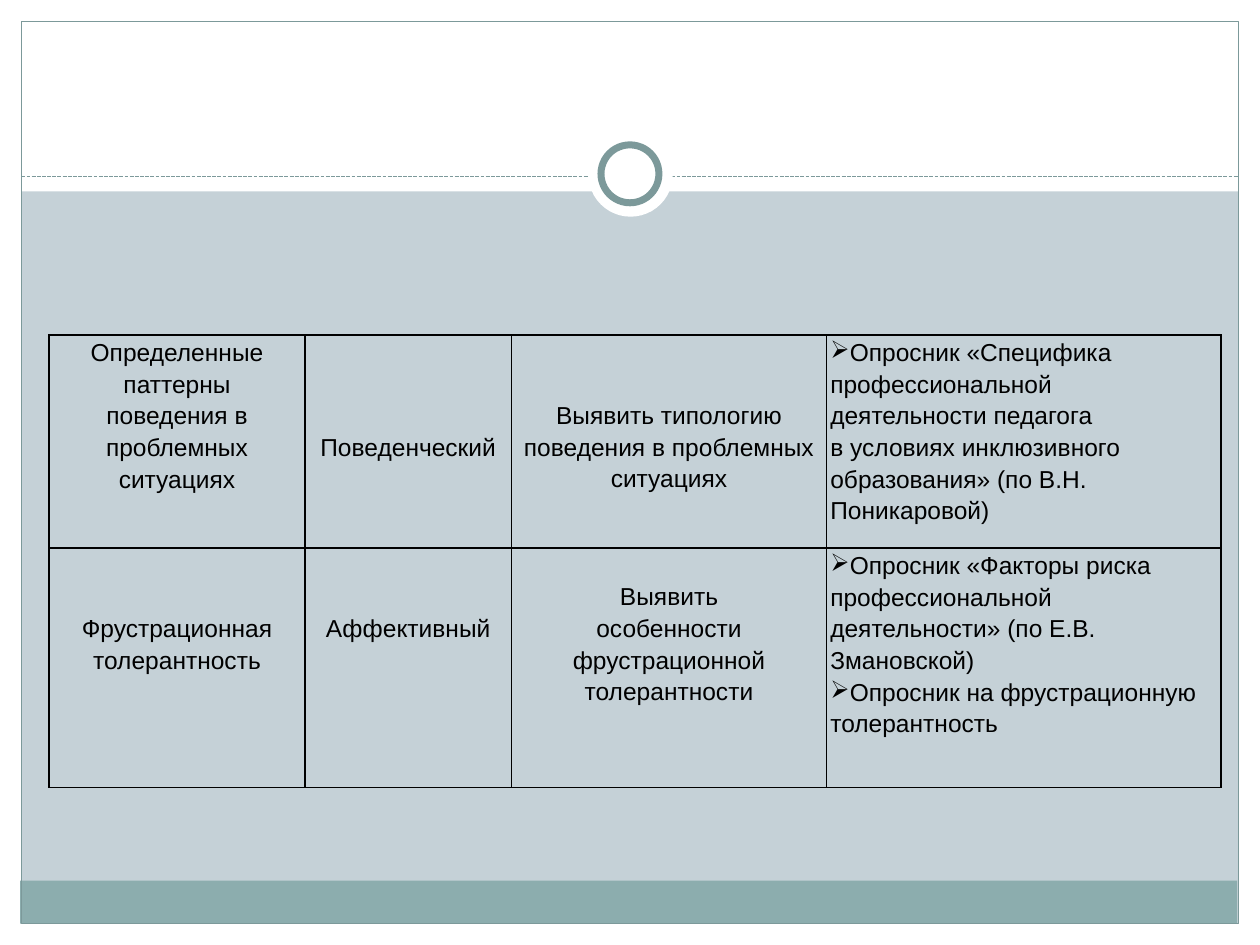
from lxml import etree
from pptx import Presentation
from pptx.dml.color import RGBColor
from pptx.enum.dml import MSO_LINE
from pptx.enum.shapes import MSO_CONNECTOR, MSO_SHAPE
from pptx.enum.text import PP_ALIGN
from pptx.oxml import parse_xml
from pptx.oxml.ns import nsdecls, qn
from pptx.util import Inches, Pt

RECT, OVAL = MSO_SHAPE.RECTANGLE, MSO_SHAPE.OVAL
STRAIGHT, DASH = MSO_CONNECTOR.STRAIGHT, MSO_LINE.SQUARE_DOT
CENTER, LEFT = PP_ALIGN.CENTER, PP_ALIGN.LEFT
WHITE = RGBColor(0xFF, 0xFF, 0xFF)
BLACK = RGBColor(0x00, 0x00, 0x00)
PALE = RGBColor(0xC5, 0xD1, 0xD7)
TEAL = RGBColor(0x8C, 0xAD, 0xAE)
DARK_TEAL = RGBColor(0x7C, 0x99, 0x9A)
BULLET = "➢"
LINE_STEP = 0.25  # height of one text line in inches

prs = Presentation()
prs.slide_width, prs.slide_height = Inches(10), Inches(7.5)
s = prs.slides.add_slide(prs.slide_layouts[6])
s.background.fill.solid()
s.background.fill.fore_color.rgb = PALE


def add_box(kind, box, fill=None, line_width=None):
    sp = s.shapes.add_shape(kind, *map(Inches, box))
    sp.shadow.inherit = False
    if fill is None:
        sp.fill.background()
    else:
        sp.fill.solid()
        sp.fill.fore_color.rgb = fill
    if line_width is None:
        sp.line.fill.background()
    else:
        sp.line.color.rgb = DARK_TEAL
        sp.line.width = Pt(line_width)


# White margins, footer band and frame
for box in [(0, 7.33, 10, 0.17), (0, 0, 10, 1.52),
            (0, 0, 0.17, 7.5), (9.83, 0, 0.17, 7.5)]:
    add_box(RECT, box, WHITE)
add_box(RECT, (0.16, 6.99, 9.66, 0.34), TEAL)
add_box(RECT, (0.17, 0.17, 9.66, 7.16), line_width=0.75)

# Dashed divider with the ring on it
divider = s.shapes.add_connector(STRAIGHT, Inches(0.17), Inches(1.4), Inches(9.83), Inches(1.4))
divider.line.color.rgb = DARK_TEAL
divider.line.width = Pt(0.75)
divider.line.dash_style = DASH
etree.SubElement(divider._element.spPr, qn("a:effectLst"))
add_box(OVAL, (4.67, 1.05, 0.67, 0.67), WHITE)
add_box(OVAL, (4.77, 1.15, 0.46, 0.46), WHITE, 4)

# Table content: lines skipped above the text, then the paragraphs
col_widths = [2.03, 1.64, 2.5, 3.13]
row_heights = [1.69, 1.9]
rows = [
    [(0, ["Определенные", "паттерны", "поведения в", "проблемных", "ситуациях"]),
     (3, ["Поведенческий"]),
     (2, ["Выявить типологию", "поведения в проблемных", "ситуациях"]),
     (0, [BULLET + "Опросник «Специфика", "профессиональной",
          "деятельности педагога", "в условиях инклюзивного",
          "образования» (по В.Н. Поникаровой)"])],
    [(2, ["Фрустрационная", "толерантность"]),
     (2, ["Аффективный"]),
     (1, ["Выявить", "особенности", "фрустрационной", "толерантности"]),
     (0, [BULLET + "Опросник «Факторы риска",
          "профессиональной\vдеятельности» (по Е.В. Змановской)",
          BULLET + "Опросник на фрустрационную толерантность"])],
]
table = s.shapes.add_table(len(rows), len(col_widths), Inches(0.39), Inches(2.66),
                           Inches(sum(col_widths)), Inches(sum(row_heights))).table
table.first_row = table.horz_banding = False
for column, width in zip(table.columns, col_widths):
    column.width = Inches(width)
for row, height in zip(table.rows, row_heights):
    row.height = Inches(height)

for i, row in enumerate(rows):
    for j, (skipped, lines) in enumerate(row):
        cell = table.cell(i, j)
        margins = {"margin_left": 0.03, "margin_right": 0.03,
                   "margin_top": skipped * LINE_STEP, "margin_bottom": 0}
        for name, value in margins.items():
            setattr(cell, name, Inches(value))

        # Borders come before the fill in the cell properties
        tc_pr = cell._tc.get_or_add_tcPr()
        for side in ("lnL", "lnR", "lnT", "lnB"):
            tc_pr.append(parse_xml(
                f'<a:{side} {nsdecls("a")} w="12700"><a:solidFill>'
                f'<a:srgbClr val="{BLACK}"/></a:solidFill></a:{side}>'))
        cell.fill.background()

        # Paragraphs, with real bullets in the last column
        tf = cell.text_frame
        for k, line in enumerate(lines):
            p = tf.paragraphs[0] if k == 0 else tf.add_paragraph()
            p.text = line.removeprefix(BULLET)
            p.alignment = LEFT if j == 3 else CENTER
            p.line_spacing = 1.15
            if line.startswith(BULLET):
                p_pr = p._p.get_or_add_pPr()
                p_pr.set("marL", "0")
                p_pr.set("indent", "0")
                etree.SubElement(p_pr, qn("a:buChar")).set("char", BULLET)
            for r in p.runs:
                r.font.name, r.font.size = "Arial", Pt(14)
                r.font.color.rgb = BLACK

prs.save("out.pptx")
